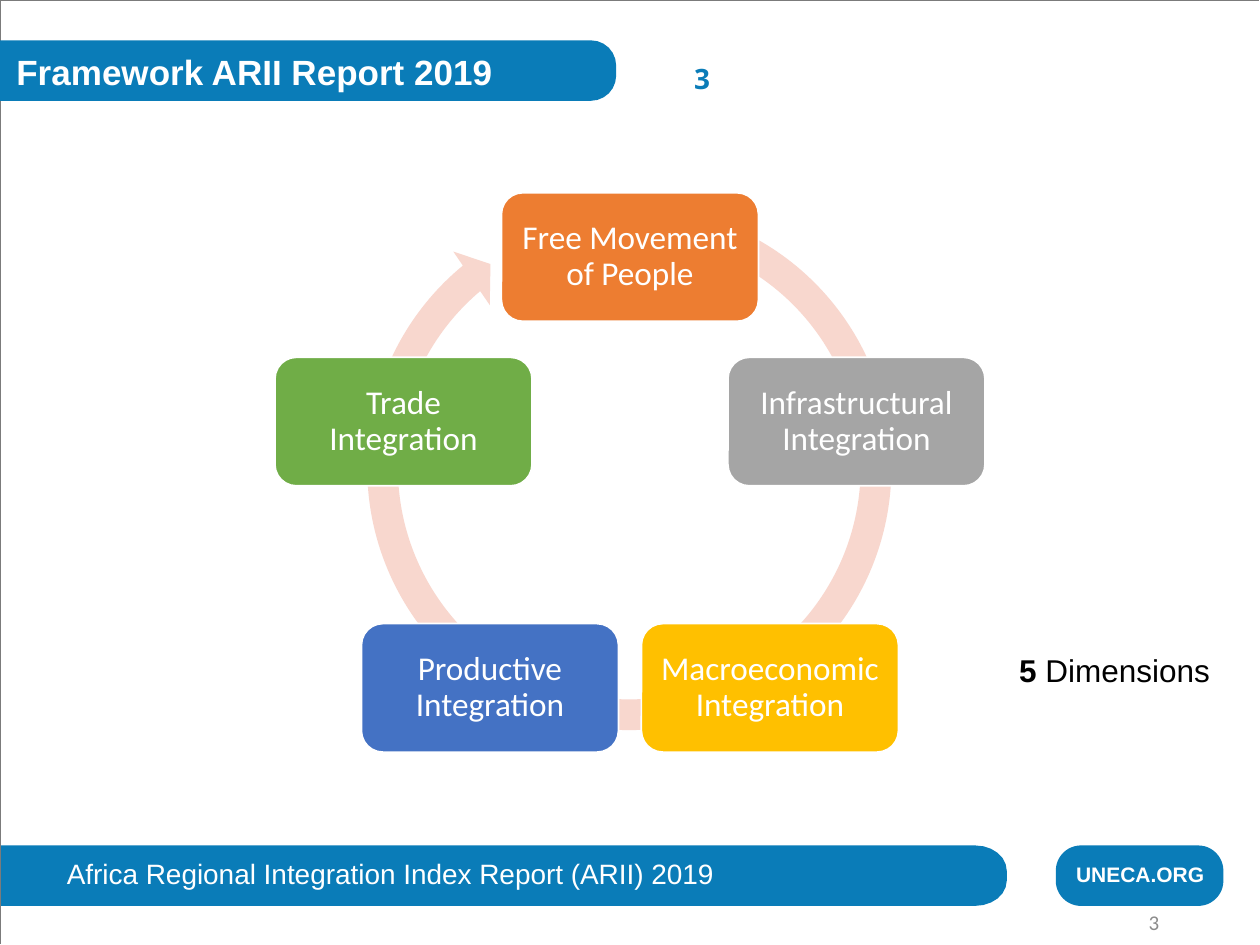
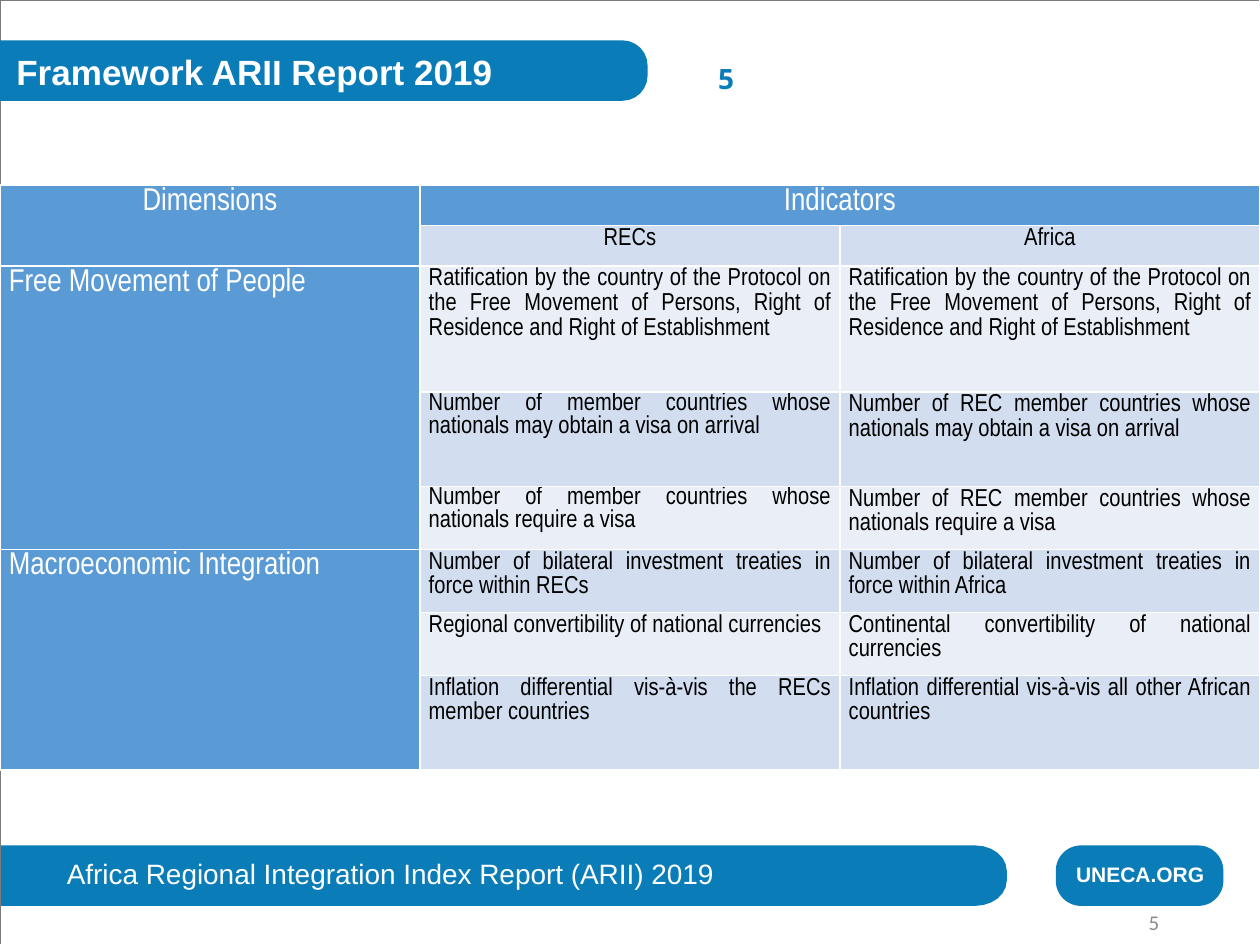
from dataclasses import dataclass
from math import cos, pi, radians, sin

from lxml import etree
from pptx import Presentation
from pptx.dml.color import RGBColor
from pptx.enum.shapes import MSO_SHAPE
from pptx.enum.text import MSO_ANCHOR, MSO_AUTO_SIZE, PP_ALIGN
from pptx.oxml.ns import qn
from pptx.shapes.autoshape import Shape
from pptx.slide import Slide
from pptx.table import _Cell
from pptx.text.text import TextFrame
from pptx.util import Inches, Pt

ROUNDED = MSO_SHAPE.ROUNDED_RECTANGLE
CIRCULAR_ARROW = MSO_SHAPE.CIRCULAR_ARROW
TOP, MIDDLE = MSO_ANCHOR.TOP, MSO_ANCHOR.MIDDLE
LEFT, CENTER = PP_ALIGN.LEFT, PP_ALIGN.CENTER
RIGHT, JUSTIFY = PP_ALIGN.RIGHT, PP_ALIGN.JUSTIFY
NO_AUTOFIT = MSO_AUTO_SIZE.NONE

WHITE = RGBColor(0xFF, 0xFF, 0xFF)
BLACK = RGBColor(0x00, 0x00, 0x00)
BRAND_BLUE = RGBColor(0x0A, 0x7C, 0xB8)
FRAME_GRAY = RGBColor(0x7B, 0x7B, 0x7B)
NUMBER_GRAY = RGBColor(0x8C, 0x8C, 0x8C)
RING_PINK = RGBColor(0xF8, 0xD7, 0xCE)
ORANGE = RGBColor(0xED, 0x7D, 0x31)
GRAY = RGBColor(0xA5, 0xA5, 0xA5)
GOLD = RGBColor(0xFF, 0xC0, 0x00)
BLUE = RGBColor(0x44, 0x72, 0xC4)
GREEN = RGBColor(0x70, 0xAD, 0x47)
HEADER_BLUE = RGBColor(0x5B, 0x9B, 0xD5)
BAND_DARK = RGBColor(0xD2, 0xDE, 0xEF)
BAND_LIGHT = RGBColor(0xEA, 0xEF, 0xF7)

TITLE_ONLY = 5
BAND_HEIGHT = 0.48
CORNER = 0.2
TABLE_SPACING = 1.07


@dataclass(frozen=True)
class Style:
    size: float
    color: RGBColor
    font: str = "Arial"
    bold: bool = False
    align: PP_ALIGN = LEFT
    spacing: float = 1.0


@dataclass(frozen=True)
class Dimension:
    name: str
    color: RGBColor


@dataclass(frozen=True)
class Indicator:
    height: float
    regional: str
    continental: str
    regional_spacing: float = TABLE_SPACING


TITLE_STYLE = Style(20, WHITE, bold=True)
FOOTER_STYLE = Style(16, WHITE)
BADGE_STYLE = Style(12, WHITE, bold=True)
TOP_NUMBER_STYLE = Style(16, BRAND_BLUE, "Open Sans", True)
PAGE_NUMBER_STYLE = Style(12, NUMBER_GRAY, "Calibri", align=RIGHT)
NODE_STYLE = Style(19, WHITE, "Calibri", align=CENTER, spacing=0.9)

DIMENSIONS = [
    Dimension("Free Movement of People", ORANGE),
    Dimension("Infrastructural Integration", GRAY),
    Dimension("Macroeconomic Integration", GOLD),
    Dimension("Productive Integration", BLUE),
    Dimension("Trade Integration", GREEN),
]

PROTOCOL = ("Ratification by the country of the Protocol on the Free Movement of Persons, "
            "Right of Residence and Right of Establishment")
INDICATORS = {
    "Free Movement of People": [
        Indicator(1, PROTOCOL, PROTOCOL),
        Indicator(0.75,
                  "Number of member countries whose nationals may obtain a visa on arrival",
                  "Number of REC member countries whose nationals may obtain a visa on arrival",
                  1.0),
        Indicator(0.5,
                  "Number of member countries whose nationals require a visa",
                  "Number of REC member countries whose nationals require a visa",
                  1.0),
    ],
    "Macroeconomic Integration": [
        Indicator(0.5,
                  "Number of bilateral investment treaties in force within RECs",
                  "Number of bilateral investment treaties in force within Africa"),
        Indicator(0.5,
                  "Regional convertibility of national currencies",
                  "Continental convertibility of national currencies"),
        Indicator(0.75,
                  "Inflation differential vis-à-vis the RECs member countries",
                  "Inflation differential vis-à-vis all other African countries"),
    ],
}


def set_text(frame: TextFrame, text: str, style: Style) -> None:
    frame.text = text
    paragraph = frame.paragraphs[0]
    paragraph.alignment = style.align
    paragraph.line_spacing = style.spacing
    font = paragraph.font
    font.name, font.size, font.bold = style.font, Pt(style.size), style.bold
    font.color.rgb = style.color


def set_margins(frame: TextFrame, margin: float) -> None:
    frame.margin_left = frame.margin_right = Inches(margin)
    frame.margin_top = frame.margin_bottom = Inches(margin)


def place(shape: Shape, left: float, top: float, width: float, height: float) -> None:
    shape.left, shape.top = Inches(left), Inches(top)
    shape.width, shape.height = Inches(width), Inches(height)


def add_label(slide: Slide, left: float, top: float, width: float, height: float,
              text: str, style: Style) -> TextFrame:
    box = slide.shapes.add_textbox(Inches(left), Inches(top), Inches(width), Inches(height))
    frame = box.text_frame
    frame.word_wrap = True
    set_margins(frame, 0)
    set_text(frame, text, style)
    return frame


def add_solid(slide: Slide, preset: MSO_SHAPE, left: float, top: float,
              width: float, height: float, color: RGBColor) -> Shape:
    shape = slide.shapes.add_shape(preset, Inches(left), Inches(top),
                                   Inches(width), Inches(height))
    shape.shadow.inherit = False
    shape.fill.solid()
    shape.fill.fore_color.rgb = color
    shape.line.fill.background()
    return shape


def add_outline(slide: Slide, points: list[tuple[float, float]], close: bool) -> Shape:
    vertices = [(Inches(x), Inches(y)) for x, y in points]
    builder = slide.shapes.build_freeform(*vertices[0])
    builder.add_line_segments(vertices[1:], close=close)
    shape = builder.convert_to_shape()
    shape.shadow.inherit = False
    return shape


def add_band(slide: Slide, top: float, width: float, corner_width: float) -> None:
    """Draw a band from the left slide edge with rounded right corners."""
    bottom = top + BAND_HEIGHT
    steps = [step * pi / 12 for step in range(7)]
    upper = [(width - corner_width * (1 - sin(a)), top + CORNER * (1 - cos(a))) for a in steps]
    lower = [(x, top + bottom - y) for x, y in reversed(upper)]
    band = add_outline(slide, [(0, top), *upper, *lower, (0, bottom)], True)
    band.fill.solid()
    band.fill.fore_color.rgb = BRAND_BLUE
    band.line.fill.background()


def add_framework_slide(presentation: Presentation, number: str,
                        band_width: float, number_left: float) -> Slide:
    slide = presentation.slides.add_slide(presentation.slide_layouts[TITLE_ONLY])
    add_band(slide, 6.71, 7.99, 0.25)
    add_label(slide, 0.53, 6.8, 7.59, 0.27,
              "Africa Regional Integration Index Report (ARII) 2019", FOOTER_STYLE)
    frame = add_outline(slide, [(0, 7.49), (0, 0), (9.99, 0)], False)
    frame.fill.background()
    frame.line.color.rgb = FRAME_GRAY
    frame.line.width = Pt(0.25)
    add_band(slide, 0.32, band_width, CORNER)

    badge = add_solid(slide, ROUNDED, 8.38, 6.71, 1.33, BAND_HEIGHT, BRAND_BLUE)
    badge.adjustments[0] = CORNER / BAND_HEIGHT
    add_label(slide, 8.54, 6.84, 1.18, 0.2, "UNECA.ORG", BADGE_STYLE)

    title = slide.shapes.title
    title.element.getparent().append(title.element)  # in front of its band
    place(title, 0.13, 0.4, 4.75, 0.34)
    set_margins(title.text_frame, 0)
    title.text_frame.auto_size = NO_AUTOFIT
    title.text_frame.vertical_anchor = TOP
    set_text(title.text_frame, "Framework ARII Report 2019", TITLE_STYLE)

    add_label(slide, number_left, 0.49, 0.61, 0.27, number, TOP_NUMBER_STYLE)
    page = add_label(slide, 8.93, 7.24, 0.27, 0.15, number, PAGE_NUMBER_STYLE)
    page.vertical_anchor = MIDDLE
    return slide


def add_dimension_cycle(slide: Slide) -> None:
    ring = add_solid(slide, CIRCULAR_ARROW, 2.78, 1.5, 4.43, 4.43, RING_PINK)
    thickness, head_width = 5.5 / 100, 5.8 / 100
    head_angle, end_angle, start_angle = (degrees * 0.6 for degrees in (5.51, 230.25, 289.37))
    for index, value in enumerate((thickness, head_angle, end_angle, start_angle, head_width)):
        ring.adjustments[index] = value

    width, height, radius = 2.04, 1.02, 1.89
    center_x, center_y = 5, 3.93
    for index, dimension in enumerate(DIMENSIONS):
        angle = radians(360 / len(DIMENSIONS) * index)
        left = center_x + radius * sin(angle) - width / 2
        top = center_y - radius * cos(angle) - height / 2
        node = add_solid(slide, ROUNDED, left, top, width, height, dimension.color)
        node.line.color.rgb = WHITE
        node.line.width = Pt(1)
        frame = node.text_frame
        frame.word_wrap = True
        frame.vertical_anchor = MIDDLE
        set_margins(frame, 0.07)
        set_text(frame, dimension.name, NODE_STYLE)


def add_dimension_count(slide: Slide) -> None:
    box = slide.shapes.add_textbox(Inches(7.99), Inches(5.12), Inches(1.73), Inches(0.4))
    box.text_frame.word_wrap = False
    set_text(box.text_frame, "5 ", Style(18, BLACK))
    paragraph = box.text_frame.paragraphs[0]
    paragraph.runs[0].font.bold = True
    paragraph.add_run().text = "Dimensions"


def format_cell(cell: _Cell, color: RGBColor) -> None:
    """Set margins, fill and white borders."""
    cell.margin_left = cell.margin_right = Inches(0.07)
    cell.margin_top = cell.margin_bottom = 0
    cell.fill.solid()
    cell.fill.fore_color.rgb = color
    properties = cell._tc.get_or_add_tcPr()
    for index, side in enumerate(("lnL", "lnR", "lnT", "lnB")):
        border = etree.Element(qn(f"a:{side}"), w=str(Pt(1)))
        fill = etree.SubElement(border, qn("a:solidFill"))
        etree.SubElement(fill, qn("a:srgbClr"), val=str(WHITE))
        properties.insert(index, border)


def add_indicator_table(slide: Slide) -> None:
    indicators = [indicator for group in INDICATORS.values() for indicator in group]
    heights = [0.32, 0.32] + [indicator.height for indicator in indicators]
    table = slide.shapes.add_table(len(heights), 3, Inches(0), Inches(1.47),
                                   Inches(10), Inches(sum(heights))).table
    table.first_row = table.horz_banding = False
    for row_index, height in enumerate(heights):
        table.rows[row_index].height = Inches(height)
        for column in range(3):
            is_header = row_index == 0 or column == 0
            band = BAND_DARK if row_index % 2 else BAND_LIGHT
            format_cell(table.cell(row_index, column), HEADER_BLUE if is_header else band)

    def write(row: int, column: int, text: str, size: float, color: RGBColor,
              align: PP_ALIGN, spacing: float = TABLE_SPACING) -> None:
        style = Style(size, color, "Arial Narrow", align=align, spacing=spacing)
        set_text(table.cell(row, column).text_frame, text, style)

    table.cell(0, 0).merge(table.cell(1, 0))
    table.cell(0, 1).merge(table.cell(0, 2))
    write(0, 0, "Dimensions", 18, WHITE, CENTER)
    write(0, 1, "Indicators", 18, WHITE, CENTER)
    write(1, 1, "RECs", 14, BLACK, CENTER)
    write(1, 2, "Africa", 14, BLACK, CENTER)

    row = 2
    for dimension, group in INDICATORS.items():
        table.cell(row, 0).merge(table.cell(row + len(group) - 1, 0))
        write(row, 0, dimension, 18, WHITE, LEFT)
        for indicator in group:
            write(row, 1, indicator.regional, 14, BLACK, JUSTIFY, indicator.regional_spacing)
            write(row, 2, indicator.continental, 14, BLACK, JUSTIFY)
            row += 1


def main() -> None:
    presentation = Presentation()
    presentation.slide_width, presentation.slide_height = Inches(10), Inches(7.5)
    cycle_slide = add_framework_slide(presentation, "3", 4.89, 5.51)
    add_dimension_cycle(cycle_slide)
    add_dimension_count(cycle_slide)
    table_slide = add_framework_slide(presentation, "5", 5.14, 5.7)
    add_indicator_table(table_slide)
    presentation.save("out.pptx")


if __name__ == "__main__":
    main()
